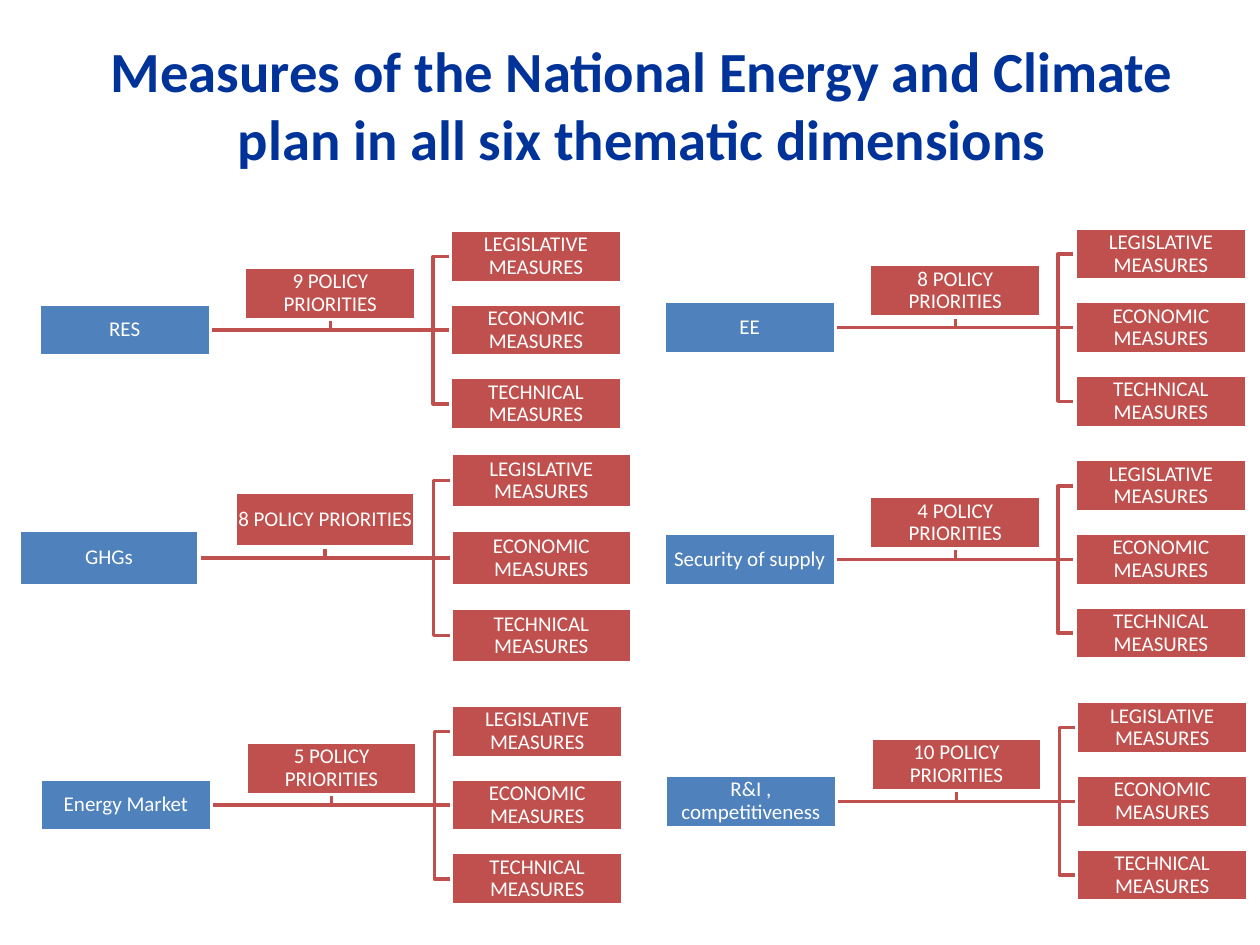
from lxml.etree import SubElement
from pptx import Presentation
from pptx.dml.color import RGBColor
from pptx.enum.shapes import MSO_CONNECTOR as CONNECTOR, MSO_SHAPE as SHAPE
from pptx.enum.text import MSO_ANCHOR as ANCHOR, PP_ALIGN as ALIGN
from pptx.oxml.ns import qn
from pptx.util import Inches, Pt

TITLE = "Measures of the National Energy and Climate plan in all six thematic dimensions"
MEASURES = ["LEGISLATIVE MEASURES", "ECONOMIC MEASURES", "TECHNICAL MEASURES"]
# dimension, number of priorities, left, middle line, box width
DIMENSIONS = [
    ("RES", 9, 0.31, 2.62, 1.36),
    ("EE", 8, 5.27, 2.6, 1.36),
    ("GHGs", 8, 0.15, 4.43, 1.43),
    ("Security of supply", 4, 5.27, 4.44, 1.36),
    ("Energy Market", 5, 0.32, 6.39, 1.36),
    ("R&I , competitiveness", 10, 5.28, 6.36, 1.36),
]
COLORS = {"title": "003399", "dimension": "4F81BD", "measure": "C0504D", "white": "FFFFFF"}
FONT = "Calibri"
# Proportions of a tree, relative to its box width
HEIGHT, COLUMN_STEP, ROW_STEP, TRUNK_GAP = 0.305, 1.2, 0.43, 0.1


def rgb(name):
    return RGBColor.from_string(COLORS[name])


def write(sp, text, size, color, margin):
    tf = sp.text_frame
    tf.word_wrap = True
    tf.vertical_anchor = ANCHOR.MIDDLE
    tf.margin_left = tf.margin_right = tf.margin_top = tf.margin_bottom = Inches(margin)
    p = tf.paragraphs[0]
    p.text = text
    p.alignment = ALIGN.CENTER
    p.font.name, p.font.size = FONT, Pt(size)
    p.font.color.rgb = rgb(color)
    return p


def add_box(shapes, text, x, middle, width, fill):
    height = HEIGHT * width
    sp = shapes.add_shape(SHAPE.RECTANGLE, Inches(x), Inches(middle - height / 2),
                          Inches(width), Inches(height))
    sp.shadow.inherit = False
    sp.fill.solid()
    sp.fill.fore_color.rgb = rgb(fill)
    sp.line.color.rgb = rgb("white")
    sp.line.width = Pt(2)
    write(sp, text, 12, "white", 0.01).line_spacing = 0.9
    return sp


def style_line(sp):
    sp.line.color.rgb = rgb("measure")
    sp.line.width = Pt(2)


def add_branch(shapes, points):
    start, *rest = [(Inches(x), Inches(y)) for x, y in points]
    builder = shapes.build_freeform(*start)
    builder.add_line_segments(rest, close=False)
    sp = builder.convert_to_shape()
    sp.shadow.inherit = False
    sp.fill.background()
    style_line(sp)


def add_tree(shapes, name, count, left, middle, width):
    right = left + width
    policy_x = left + COLUMN_STEP * width
    measure_x = left + 2 * COLUMN_STEP * width
    trunk_x = measure_x - TRUNK_GAP * width
    row = ROW_STEP * width
    policy_y = middle - row / 2
    policy_mid = policy_x + width / 2

    # Branches behind the boxes
    add_branch(shapes, [(right, middle), (policy_mid, middle),
                        (policy_mid, policy_y + HEIGHT * width / 2)])
    for y in (middle + row, middle - row):
        add_branch(shapes, [(right, middle), (trunk_x, middle), (trunk_x, y), (measure_x, y)])

    # Boxes
    root = add_box(shapes, name, left, middle, width, "dimension")
    leaves = [add_box(shapes, text, measure_x, middle + (i - 1) * row, width, "measure")
              for i, text in enumerate(MEASURES)]
    add_box(shapes, f"{count} POLICY PRIORITIES", policy_x, policy_y, width, "measure")

    # Straight line from the dimension to the middle measure, placed behind the boxes
    line = shapes.add_connector(CONNECTOR.STRAIGHT, 0, 0, 0, 0)
    line.begin_connect(root, 3)
    line.end_connect(leaves[1], 1)
    style_line(line)
    SubElement(line._element.spPr, qn("a:effectLst"))
    root._element.addprevious(line._element)


prs = Presentation()
prs.slide_width, prs.slide_height = Inches(10), Inches(7.5)
slide = prs.slides.add_slide(prs.slide_layouts[6])

# Title
title = slide.shapes.add_textbox(Inches(0.5), Inches(0.2), Inches(9.19), Inches(1.25))
write(title, TITLE, 32.4, "title", 0.05).font.bold = True

# One tree for each dimension
for dimension in DIMENSIONS:
    add_tree(slide.shapes, *dimension)

prs.save("out.pptx")
